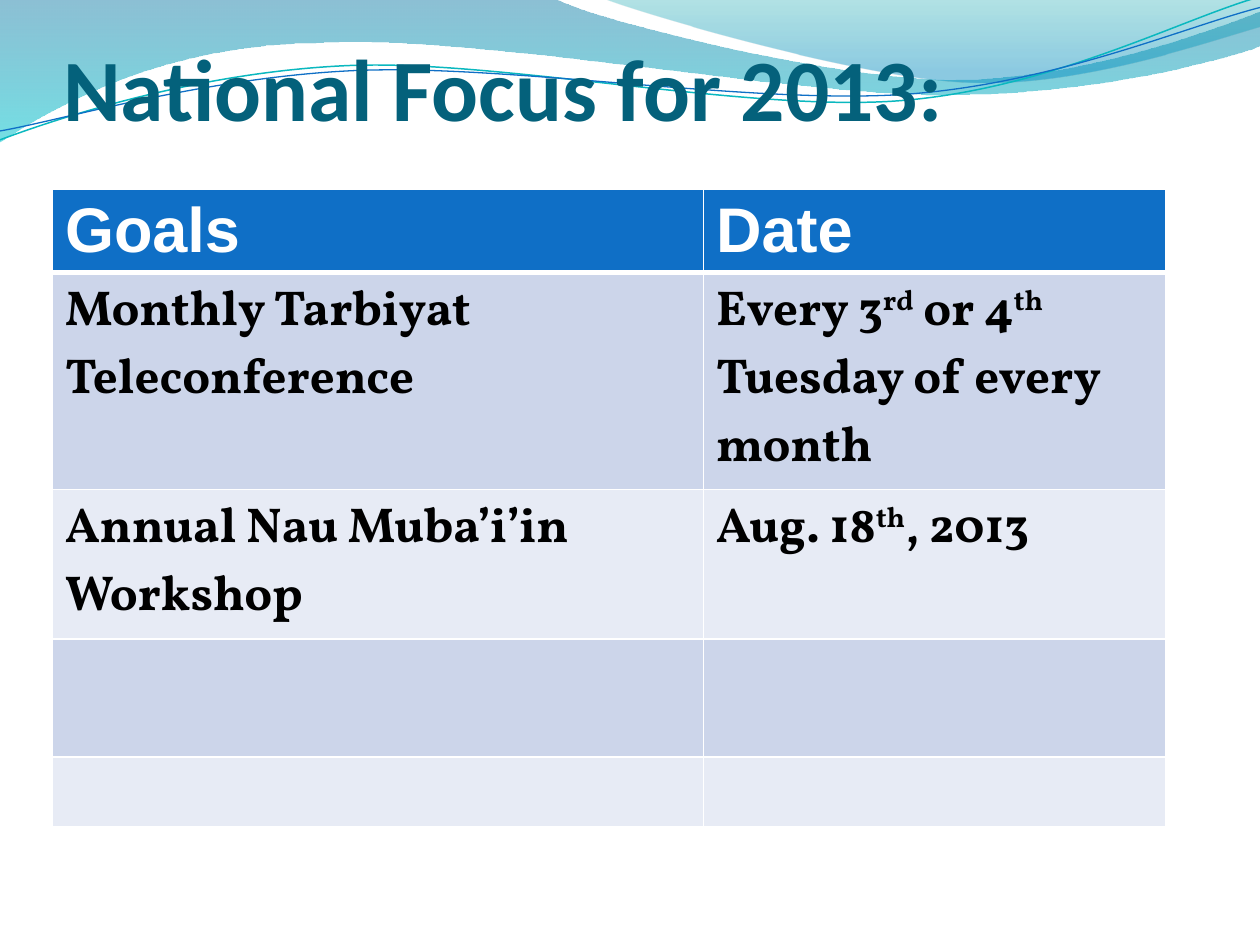
from math import cos, radians, sin

from lxml.etree import SubElement
from pptx import Presentation
from pptx.dml.color import RGBColor
from pptx.enum.text import MSO_ANCHOR, MSO_AUTO_SIZE, PP_ALIGN
from pptx.oxml.ns import qn
from pptx.util import Inches, Pt

COLORS = {
    "title": "04617B", "header": "0F6FC6", "band": "CCD5EA", "pale": "E7EBF5",
    "white": "FFFFFF", "black": "000000", "teal": "0AB8BF", "blue": "0F6FC6",
    "deep": "0074A1", "aqua": "00C6CF", "sea": "00A1A9", "sky": "008BBF",
}
TILT = 357.3  # degrees, for the two thin curves

# Each outline is a start point, then lines (x, y) and Bézier curves (six numbers).
LEFT_WAVE = [
    (0, -0.01), (4.4, -0.01), (4.76, 0.17, 6.64, 0.63, 7.58, 0.63),
    (8.53, 0.63, 9.58, 0.26, 10, 0.09), (10.01, 0.36),
    (9.83, 0.44, 8.7, 0.76, 7.46, 0.75), (6.22, 0.75, 3.82, 0.28, 2.57, 0.34),
    (1.29, 0.35, 0.46, 0.83, -0.01, 1.13), (0, -0.01),
]
RIGHT_WAVE = [
    (4.79, -0.01), (5.09, 0.11, 6.82, 0.62, 7.69, 0.65),
    (8.56, 0.69, 9.61, 0.32, 10, 0.21), (10, 0), (4.79, -0.01),
]
TEAL_LINE = [
    (0, 1.11), (0.48, 0.93, 1.58, 0.57, 2.77, 0.52),
    (3.95, 0.47, 5.93, 0.89, 7.13, 0.8), (8.33, 0.71, 9.38, 0.15, 9.98, -0.02),
]
BLUE_LINE = [
    (0, 1.04), (0.47, 0.96, 1.64, 0.61, 2.83, 0.56),
    (4.03, 0.51, 5.97, 0.83, 7.17, 0.75), (8.36, 0.67, 9.41, 0.21, 10, 0.06),
]

# A cell is a list of (text, is superscript) spans.
GOALS = [
    [[("Goals", False)], [("Date", False)]],
    [[("Monthly Tarbiyat Teleconference", False)],
     [("Every 3", False), ("rd", True), (" or 4", False), ("th", True),
      (" Tuesday of every month", False)]],
    [[("Annual Nau Muba’i’in Workshop", False)],
     [("Aug. 18", False), ("th", True), (", 2013", False)]],
    [[], []],
    [[], []],
]


def rgb(name):
    return RGBColor.from_string(COLORS[name])


def add_span(para, text, *, font, size, color, bold=True, superscript=False):
    span = para.add_run()
    span.text = text
    span.font.name = font
    span.font.size = Pt(size)
    span.font.bold = bold
    span.font.color.rgb = rgb(color)
    if superscript:
        span.font._element.set("baseline", "30000")


def level(parts, center):
    """Turn an outline back by TILT, so that the shape's rotation restores it."""
    c, s = cos(radians(-TILT)), sin(radians(-TILT))
    result = []
    for part in parts:
        turned = []
        for x, y in zip(part[::2], part[1::2]):
            dx, dy = x - center[0], y - center[1]
            turned += [center[0] + dx * c - dy * s, center[1] + dx * s + dy * c]
        result.append(turned)
    return result


class SlideBuilder:
    def __init__(self, page):
        self.page = page

    def outline(self, parts, closed):
        points = [(Inches(x), Inches(y)) for part in parts
                  for x, y in zip(part[::2], part[1::2])]
        builder = self.page.shapes.build_freeform(*points[0])
        builder.add_line_segments(points[1:], close=closed)
        shape = builder.convert_to_shape()
        shape.shadow.inherit = False
        # Merge the three segments of each curve into one Bézier element.
        segments = list(shape._element.spPr.iter(qn("a:lnTo")))
        for part in parts[1:]:
            group = segments[:len(part) // 2]
            del segments[:len(group)]
            if len(group) == 3:
                parent = group[0].getparent()
                bezier = SubElement(parent, qn("a:cubicBezTo"))
                parent.replace(group[0], bezier)
                for segment in group:
                    bezier.append(segment[0])
                for segment in group[1:]:
                    parent.remove(segment)
        return shape

    def wave(self, parts, stops):
        """Draw a filled wave; stops are (position, colour, opacity in percent)."""
        shape = self.outline(parts, closed=True)
        shape.line.fill.background()
        shape.fill.gradient()
        shape.fill.gradient_angle = 270
        for stop, (position, color, _) in zip(shape.fill.gradient_stops, stops):
            stop.position = position
            stop.color.rgb = rgb(color)
        tints = shape._element.spPr.iter(qn("a:srgbClr"))
        for tint, (_, _, opacity) in zip(tints, stops):
            SubElement(tint, qn("a:alpha"), val=str(opacity * 1000))

    def curve(self, parts, center, color, width):
        shape = self.outline(level(parts, center), closed=False)
        shape.rotation = TILT
        shape.fill.background()
        shape.line.color.rgb = rgb(color)
        shape.line.width = Pt(width)

    def title(self, text, left, top, width, height):
        box = self.page.shapes.title
        box.left, box.top = Inches(left), Inches(top)
        box.width, box.height = Inches(width), Inches(height)
        self.page.shapes._spTree.append(box._element)  # in front of the waves
        frame = box.text_frame
        frame.word_wrap = True
        frame.auto_size = MSO_AUTO_SIZE.NONE
        frame.vertical_anchor = MSO_ANCHOR.BOTTOM
        frame.margin_left = frame.margin_right = frame.margin_bottom = 0
        frame.margin_top = Inches(0.05)
        para = frame.paragraphs[0]
        para.alignment = PP_ALIGN.LEFT
        add_span(para, text, font="Calibri", size=50, color="title")

    def borders(self, cell, top, bottom):
        props = cell._tc.get_or_add_tcPr()
        for side, width in (("L", 1), ("R", 1), ("T", top), ("B", bottom)):
            line = SubElement(props, qn(f"a:ln{side}"), w=str(Pt(width)))
            fill = SubElement(line, qn("a:solidFill"))
            SubElement(fill, qn("a:srgbClr"), val=COLORS["white"])

    def table(self, rows, left, top, height, widths, heights):
        table = self.page.shapes.add_table(
            len(rows), len(widths), Inches(left), Inches(top),
            Inches(sum(widths)), Inches(height)).table
        for column, width in zip(table.columns, widths):
            column.width = Inches(width)
        for index, (row, row_height) in enumerate(zip(rows, heights)):
            table.rows[index].height = Inches(row_height)
            if index == 0:
                fill, style = "header", dict(font="Arial", size=36, color="white")
            else:
                fill = "band" if index % 2 else "pale"
                style = dict(font="Vollkorn", size=28, color="black")
            for cell, spans in zip(table.rows[index].cells, row):
                self.borders(cell, top=3 if index == 1 else 1, bottom=1 if index else 3)
                cell.fill.solid()
                cell.fill.fore_color.rgb = rgb(fill)
                for text, superscript in spans:
                    add_span(cell.text_frame.paragraphs[0], text,
                             superscript=superscript, **style)


def main():
    deck = Presentation()
    deck.slide_width, deck.slide_height = Inches(10), Inches(7.5)
    slide = SlideBuilder(deck.slides.add_slide(deck.slide_layouts[5]))
    slide.wave(LEFT_WAVE, [(0, "deep", 45), (1, "aqua", 55)])
    slide.wave(RIGHT_WAVE, [(0, "sea", 30), (0.8, "sky", 45)])
    slide.curve(TEAL_LINE, (4.99, 0.58), "teal", 0.85)
    slide.curve(BLUE_LINE, (5, 0.59), "blue", 0.75)
    slide.title("National Focus for 2013:", 0.5, 0.08, 9, 1.02)
    slide.table(GOALS, 5 / 12, 1.5, 4.72, widths=[62 / 12, 44 / 12],
                heights=[0.66, 0.66, 0.66, 0.94, 0.55])
    deck.save("out.pptx")


if __name__ == "__main__":
    main()
